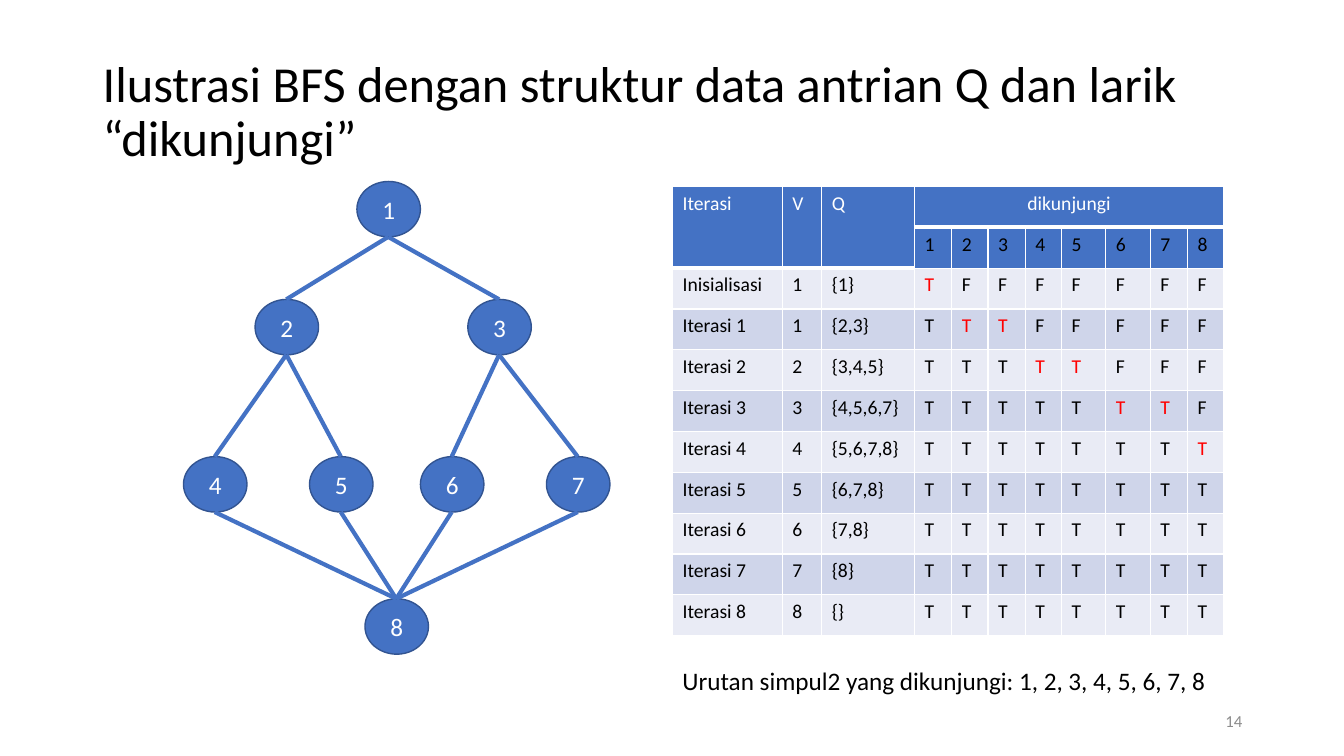
from dataclasses import dataclass
from typing import NamedTuple

from lxml import etree
from pptx import Presentation
from pptx.dml.color import RGBColor
from pptx.enum.shapes import MSO_CONNECTOR, MSO_SHAPE
from pptx.enum.text import MSO_ANCHOR, MSO_AUTO_SIZE, PP_ALIGN
from pptx.oxml.ns import qn
from pptx.util import Emu, Pt

LEFT, CENTER, RIGHT = PP_ALIGN.LEFT, PP_ALIGN.CENTER, PP_ALIGN.RIGHT
TOP, MIDDLE = MSO_ANCHOR.TOP, MSO_ANCHOR.MIDDLE
OVAL, LINE = MSO_SHAPE.OVAL, MSO_CONNECTOR.STRAIGHT
FIT = MSO_AUTO_SIZE.SHAPE_TO_FIT_TEXT


@dataclass(frozen=True)
class Theme:
    font: str = "Calibri"
    blue: str = "4472C4"
    rim: str = "325491"
    white: str = "FFFFFF"
    black: str = "000000"
    red: str = "FF0000"
    gray: str = "8C8C8C"
    bands: tuple[str, str] = ("E9EBF5", "CFD5EA")
    title: int = 36
    body: int = 18
    cell: int = 14
    small: int = 12


class Node(NamedTuple):
    label: int
    x: int
    y: int


class Step(NamedTuple):
    name: str
    vertex: int
    queue: str
    seen: int  # nodes 1 to seen are visited


THEME = Theme()
NODE_W, NODE_H = 63, 55
NODES = [
    Node(1, 354, 180),
    Node(2, 253, 297), Node(3, 464, 297),
    Node(4, 182, 453), Node(5, 307, 453), Node(6, 417, 453), Node(7, 542, 453),
    Node(8, 362, 594),
]
EDGES = [(2, 4), (2, 5), (3, 6), (3, 7), (1, 2), (1, 3),
         (6, 8), (7, 8), (4, 8), (5, 8)]
STEPS = [
    Step("Inisialisasi", 1, "{1}", 1),
    Step("Iterasi 1", 1, "{2,3}", 3),
    Step("Iterasi 2", 2, "{3,4,5}", 5),
    Step("Iterasi 3", 3, "{4,5,6,7}", 7),
    Step("Iterasi 4", 4, "{5,6,7,8}", 8),
    Step("Iterasi 5", 5, "{6,7,8}", 8),
    Step("Iterasi 6", 6, "{7,8}", 8),
    Step("Iterasi 7", 7, "{8}", 8),
    Step("Iterasi 8", 8, "{}", 8),
]
HEADS = ["Iterasi", "V", "Q"]
WIDTHS = [109, 39, 92, 37, 36, 37, 36, 44, 44, 37, 36]
TABLE_H = 446


def px(n: int) -> Emu:
    """Convert px to EMU at 100 px to the inch."""
    return Emu(n * 9144)


def rgb(color: str) -> RGBColor:
    return RGBColor.from_string(color)


def write(frame, text: str, *, size: int, color: str = THEME.black,
          align=LEFT, space: float = 1.0) -> None:
    para = frame.paragraphs[0]
    para.alignment = align
    para.line_spacing = space
    run = para.add_run()
    run.text = text
    run.font.name = THEME.font
    run.font.size = Pt(size)
    run.font.color.rgb = rgb(color)


def add_box(slide, x: int, y: int, w: int, h: int, *, anchor=TOP,
            wrap: bool = True):
    box = slide.shapes.add_textbox(px(x), px(y), px(w), px(h))
    frame = box.text_frame
    frame.word_wrap = wrap
    frame.vertical_anchor = anchor
    return frame


def add_node(slide, node: Node) -> None:
    shape = slide.shapes.add_shape(OVAL, px(node.x), px(node.y),
                                   px(NODE_W), px(NODE_H))
    shape.shadow.inherit = False
    shape.fill.solid()
    shape.fill.fore_color.rgb = rgb(THEME.blue)
    shape.line.color.rgb = rgb(THEME.rim)
    shape.line.width = Pt(1)
    shape.text_frame.vertical_anchor = MIDDLE
    write(shape.text_frame, str(node.label), size=THEME.body,
          color=THEME.white, align=CENTER)


def add_edge(slide, upper: Node, lower: Node) -> None:
    """Join the foot of the upper node to the head of the lower one."""
    half = NODE_W // 2
    edge = slide.shapes.add_connector(
        LINE, px(upper.x + half), px(upper.y + NODE_H),
        px(lower.x + half), px(lower.y))
    edge.line.color.rgb = rgb(THEME.blue)
    edge.line.width = Pt(3)
    etree.SubElement(edge._element.spPr, qn("a:effectLst"))


def style(cell, fill: str, foot: int = 1) -> None:
    """Give a cell its fill and white borders; foot is the bottom width."""
    props = cell._tc.get_or_add_tcPr()
    for side, width in (("L", 1), ("R", 1), ("T", 1), ("B", foot)):
        line = etree.SubElement(props, qn(f"a:ln{side}"), w=str(Pt(width)))
        paint = etree.SubElement(line, qn("a:solidFill"))
        etree.SubElement(paint, qn("a:srgbClr"), val=THEME.white)
    cell.fill.solid()
    cell.fill.fore_color.rgb = rgb(fill)


def add_table(slide, x: int, y: int) -> None:
    rows, first = len(STEPS) + 2, len(HEADS)
    table = slide.shapes.add_table(rows, len(WIDTHS), px(x), px(y),
                                   px(sum(WIDTHS)), px(TABLE_H)).table
    table.first_row = table.horz_banding = False
    for col, width in zip(table.columns, WIDTHS):
        col.width = px(width)
    for r, row in enumerate(table.rows):
        row.height = px(TABLE_H) // rows
        for cell in row.cells:
            style(cell, THEME.blue if r < 2 else THEME.bands[r % 2],
                  3 if r == 0 else 1)

    def put(r: int, c: int, text: str, color: str = THEME.black,
            align=LEFT) -> None:
        write(table.cell(r, c).text_frame, text, size=THEME.cell,
              color=color, align=align)

    for c, head in enumerate(HEADS):
        table.cell(0, c).merge(table.cell(1, c))
        put(0, c, head, THEME.white)
    table.cell(0, first).merge(table.cell(0, len(WIDTHS) - 1))
    put(0, first, "dikunjungi", THEME.white, CENTER)
    for node in NODES:
        put(1, first + node.label - 1, str(node.label))

    prior = 0
    for r, step in enumerate(STEPS, 2):
        for c, text in enumerate((step.name, str(step.vertex), step.queue)):
            put(r, c, text)
        for node in NODES:
            fresh = prior < node.label <= step.seen
            put(r, first + node.label - 1,
                "T" if node.label <= step.seen else "F",
                THEME.red if fresh else THEME.black)
        prior = step.seen


def main() -> None:
    deck = Presentation()
    deck.slide_width, deck.slide_height = px(1333), px(750)
    slide = deck.slides.add_slide(deck.slide_layouts[6])

    write(add_box(slide, 92, 40, 1150, 145, anchor=MIDDLE),
          "Ilustrasi BFS dengan struktur data antrian Q dan larik “dikunjungi”",
          size=THEME.title, space=0.9)
    for node in NODES:
        add_node(slide, node)
    for upper, lower in EDGES:
        add_edge(slide, NODES[upper - 1], NODES[lower - 1])
    add_table(slide, 667, 185)
    write(add_box(slide, 942, 695, 300, 40, anchor=MIDDLE), "14",
          size=THEME.small, color=THEME.gray, align=RIGHT)
    order = add_box(slide, 667, 655, 545, 40, wrap=False)
    order.auto_size = FIT
    write(order, "Urutan simpul2 yang dikunjungi: 1, 2, 3, 4, 5, 6, 7, 8",
          size=THEME.body)
    deck.save("out.pptx")


if __name__ == "__main__":
    main()
